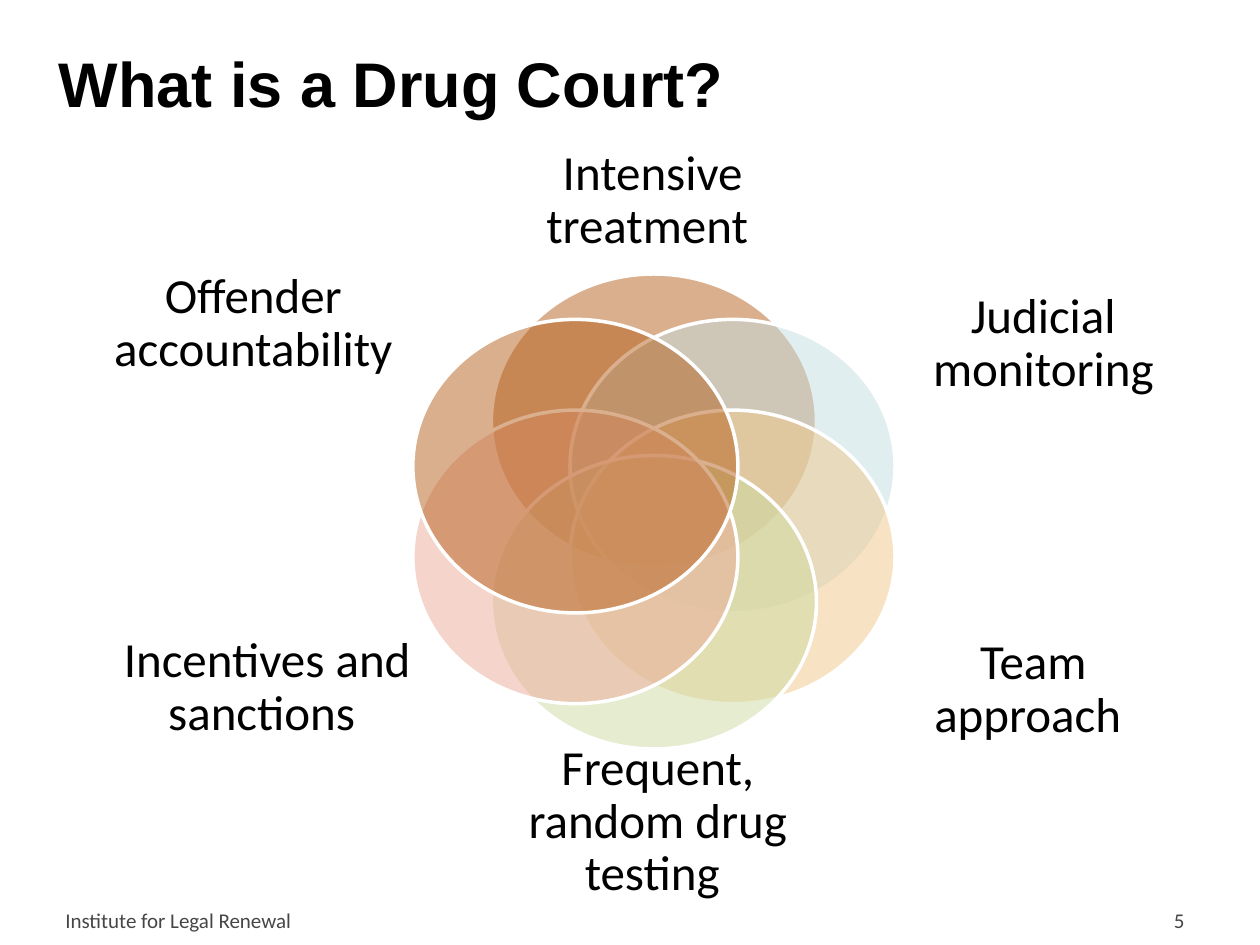
from math import cos, radians, sin

from lxml.etree import SubElement
from pptx import Presentation
from pptx.dml.color import RGBColor
from pptx.enum.shapes import MSO_SHAPE as Shape
from pptx.enum.text import MSO_ANCHOR as Anchor, PP_ALIGN as Align
from pptx.oxml.ns import qn
from pptx.util import Inches, Pt

BLACK = RGBColor(0x00, 0x00, 0x00)
GRAY = RGBColor(0x46, 0x46, 0x46)
WHITE = RGBColor(0xFF, 0xFF, 0xFF)
BROWN = RGBColor(0xB6, 0x61, 0x1E)
BLUE = RGBColor(0xC3, 0xDE, 0xE1)
AMBER = RGBColor(0xF1, 0xC8, 0x8A)
GREEN = RGBColor(0xCD, 0xDB, 0xA0)
PINK = RGBColor(0xED, 0xAA, 0x9A)

deck = Presentation()
deck.slide_width = Inches(10)
deck.slide_height = Inches(7.5)
page = deck.slides.add_slide(deck.slide_layouts[6])


def add_text(text, place, size, color=BLACK, font="Calibri", align=Align.LEFT, anchor=Anchor.MIDDLE):
    box = page.shapes.add_textbox(*[Inches(value) for value in place])
    frame = box.text_frame
    frame.word_wrap = True
    frame.vertical_anchor = anchor
    para = frame.paragraphs[0]
    para.alignment = align
    span = para.add_run()
    span.text = text
    span.font.name = font
    span.font.size = Pt(size)
    span.font.color.rgb = color
    return frame


title = add_text("What is a Drug Court?", (0.37, 0.3, 9.26, 1.45), 36, font="Arial", anchor=Anchor.TOP)
title.paragraphs[0].runs[0].font.bold = True

elements = [
    ("Intensive treatment ", BROWN, (3.98, 0.94, 2.4, 1.31)),
    ("Judicial monitoring", BLUE, (7.14, 2.02, 2.28, 1.43)),
    ("Team approach ", AMBER, (7.06, 4.68, 2.28, 1.6)),
    ("Frequent, random drug testing ", GREEN, (4.02, 5.87, 2.4, 1.31)),
    ("Incentives and sanctions ", PINK, (0.98, 4.66, 2.28, 1.6)),
    ("Offender accountability  ", BROWN, (0.87, 1.98, 2.28, 1.6)),
]
center_x, center_y, radius = 5.19, 4.06, 0.72
width, height = 2.58, 2.33

for index, (label, color, place) in enumerate(elements):
    angle = radians(60 * index)
    left = center_x + radius * sin(angle) - width / 2
    top = center_y - radius * cos(angle) - height / 2
    circle = page.shapes.add_shape(Shape.OVAL, Inches(left), Inches(top), Inches(width), Inches(height))
    circle.shadow.inherit = False
    circle.fill.solid()
    circle.fill.fore_color.rgb = color
    fill_color = circle.fill._xPr.find(qn("a:solidFill"))[0]
    SubElement(fill_color, qn("a:alpha"), val="50000")
    circle.line.color.rgb = WHITE
    circle.line.width = Pt(2)

    frame = add_text(label, place, 28, align=Align.CENTER)
    frame.margin_left = frame.margin_right = frame.margin_top = frame.margin_bottom = 0
    frame.paragraphs[0].line_spacing = 0.9

add_text("5", (7.17, 7.1, 2.33, 0.4), 12, GRAY, align=Align.RIGHT)
add_text("Institute for Legal Renewal", (0.42, 7.1, 3.17, 0.4), 12, GRAY)

deck.save("out.pptx")
